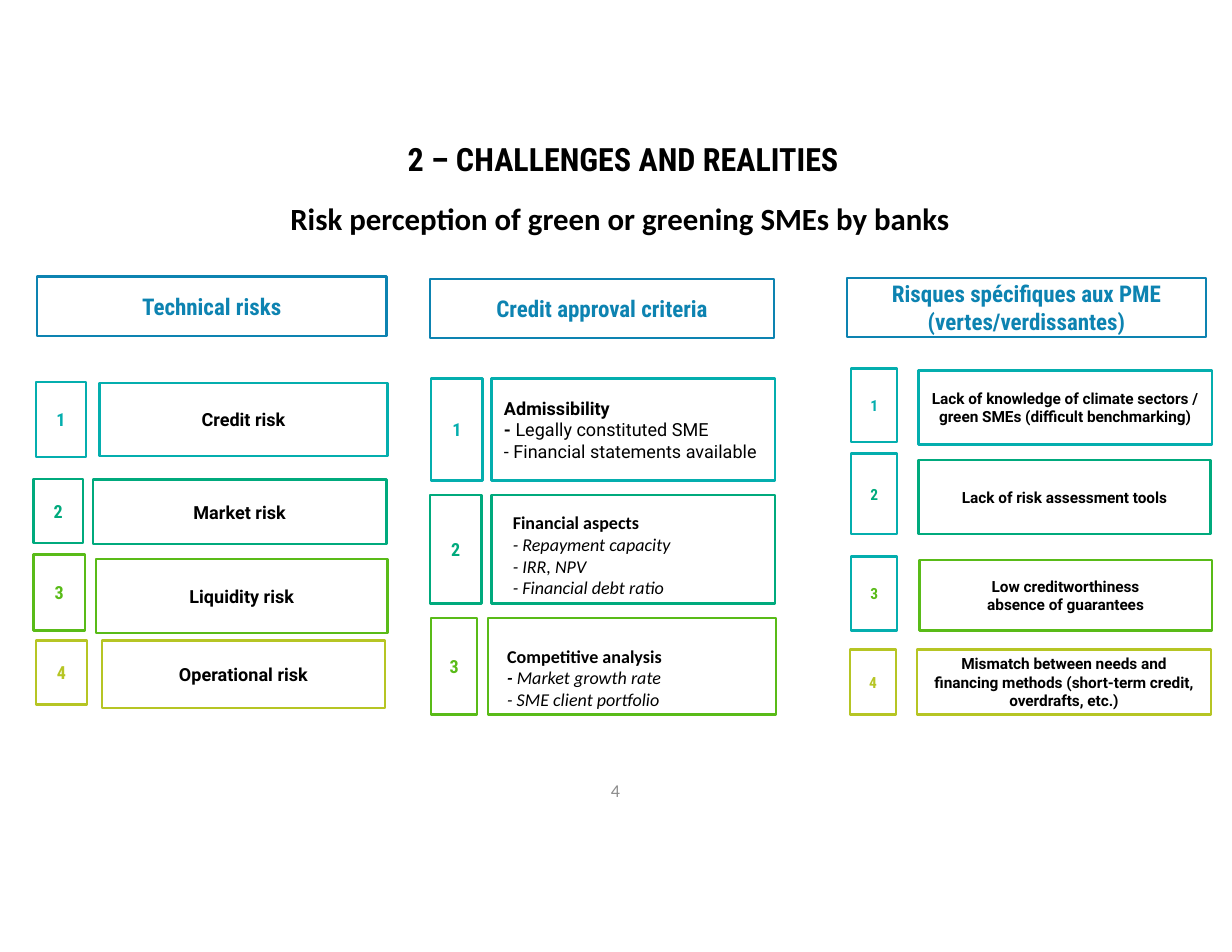
from pptx import Presentation
from pptx.dml.color import RGBColor
from pptx.enum import shapes, text
from pptx.util import Inches, Pt

COLORS = {"black": "000000", "blue": "0D83B1", "teal": "04AEAE", "green": "00AA7D",
          "leaf": "59BB18", "lime": "B6C524", "gray": "8C8C8C"}
LEVELS = ["teal", "green", "leaf", "lime"]
CONDENSED = "Roboto Condensed"

prs = Presentation()
prs.slide_width, prs.slide_height = Inches(11), Inches(8.5)
s = prs.slides.add_slide(prs.slide_layouts[6])


def add_box(at, lines, size, font, color="black", border=None, bold=True, inset=0.11):
    at = [Inches(v) for v in at]
    if border:
        sp = s.shapes.add_shape(shapes.MSO_SHAPE.RECTANGLE, *at)
        sp.shadow.inherit = False
        sp.fill.background()
        sp.line.color.rgb = RGBColor.from_string(COLORS[border])
        sp.line.width = Pt(1.5)
    else:
        sp = s.shapes.add_textbox(*at)
    tf = sp.text_frame
    tf.word_wrap = True
    tf.vertical_anchor = text.MSO_ANCHOR.MIDDLE
    tf.margin_left = tf.margin_right = tf.margin_top = tf.margin_bottom = Inches(inset)
    for i, line in enumerate(lines):
        p = tf.paragraphs[0] if i == 0 else tf.add_paragraph()
        p.alignment = text.PP_ALIGN.CENTER
        p.font.size, p.font.name, p.font.bold = Pt(size), font, bold
        p.font.color.rgb = RGBColor.from_string(COLORS[color])
        p.add_run().text = line
    return tf


def format_list(tf, italic, bold_dash):
    for i, p in enumerate(tf.paragraphs):
        p.alignment = text.PP_ALIGN.LEFT
        p.font.bold = i == 0
        p.font.italic = italic and i > 0
        if i == 1 and bold_dash:
            r = p.runs[0]
            rest = r.text[2:]
            r.text = "- "
            r.font.bold = True
            p.add_run().text = rest


add_box((0.93, 1.16, 9.27, 0.52), ["2 – CHALLENGES AND REALITIES"], 20.6, CONDENSED)
add_box((0.9, 1.69, 9.27, 0.52), ["Risk perception of green or greening SMEs by banks"],
        19.8, "Calibri")

headers = [
    ((0.33, 2.47, 3.12, 0.53), "Technical risks"),
    ((3.84, 2.49, 3.07, 0.53), "Credit approval criteria"),
    ((7.56, 2.48, 3.21, 0.53), "Risques spécifiques aux PME (vertes/verdissantes)"),
]
for at, title in headers:
    add_box(at, [title], 14.8, CONDENSED, "blue", "blue")

technical_risks = [
    ((0.32, 3.41, 0.45, 0.67), (0.89, 3.42, 2.57, 0.65), ["Credit risk"]),
    ((0.3, 4.28, 0.44, 0.57), (0.83, 4.28, 2.62, 0.58), ["Market risk"]),
    ((0.3, 4.95, 0.46, 0.68), (0.86, 4.99, 2.6, 0.66), ["Liquidity risk"]),
    ((0.32, 5.72, 0.46, 0.57), (0.91, 5.72, 2.53, 0.6), ["Operational risk"]),
]
sme_risks = [
    ((7.6, 3.29, 0.41, 0.66), (8.2, 3.31, 2.62, 0.66),
     ["Lack of knowledge of climate sectors / green SMEs (difficult benchmarking)"]),
    ((7.6, 4.05, 0.41, 0.72), (8.2, 4.11, 2.61, 0.66), ["Lack of risk assessment tools"]),
    ((7.6, 4.97, 0.41, 0.66), (8.21, 5, 2.61, 0.63),
     ["Low creditworthiness", "absence of guarantees"]),
    ((7.59, 5.8, 0.41, 0.58), (8.19, 5.8, 2.62, 0.58),
     ["Mismatch between needs and financing methods (short-term credit, overdrafts, etc.)"]),
]
sme_borders = ["teal", "teal", "teal", "lime"]
for rows, size, borders in [(technical_risks, 11.6, LEVELS), (sme_risks, 9.9, sme_borders)]:
    for n, (number_at, label_at, lines) in enumerate(rows):
        add_box(number_at, [str(n + 1)], size, CONDENSED, LEVELS[n], borders[n])
        add_box(label_at, lines, size, "Roboto", border=LEVELS[n])

criteria = [
    ((3.85, 3.38, 0.46, 0.91), (4.39, 3.38, 2.53, 0.91), None,
     ["Admissibility", "- Legally constituted SME", "- Financial statements available"]),
    ((3.84, 4.42, 0.46, 0.97), (4.39, 4.42, 2.53, 0.97), (4.48, 4.52, 2.42, 0.88),
     ["Financial aspects", "- Repayment capacity", "- IRR, NPV", "- Financial debt ratio"]),
    ((3.85, 5.52, 0.41, 0.86), (4.36, 5.52, 2.57, 0.86), (4.43, 5.71, 2.3, 0.68),
     ["Competitive analysis", "- Market growth rate", "- SME client portfolio"]),
]
for n, (number_at, frame_at, text_at, lines) in enumerate(criteria):
    add_box(number_at, [str(n + 1)], 11.6, CONDENSED, LEVELS[n], LEVELS[n])
    if text_at:
        add_box(frame_at, [], 11.6, "Calibri", border=LEVELS[n])
        tf = add_box(text_at, lines, 11.6, "Calibri", inset=0.05)
        tf.margin_left = tf.margin_right = Inches(0.1)
        tf.vertical_anchor = text.MSO_ANCHOR.TOP
    else:
        tf = add_box(frame_at, lines, 11.6, "Roboto", border=LEVELS[n])
    format_list(tf, italic=bool(text_at), bold_dash=n != 1)

add_box((3.64, 6.89, 3.71, 0.33), ["4"], 11.6, "Calibri", "gray", bold=False, inset=0.04)

prs.save("out.pptx")
